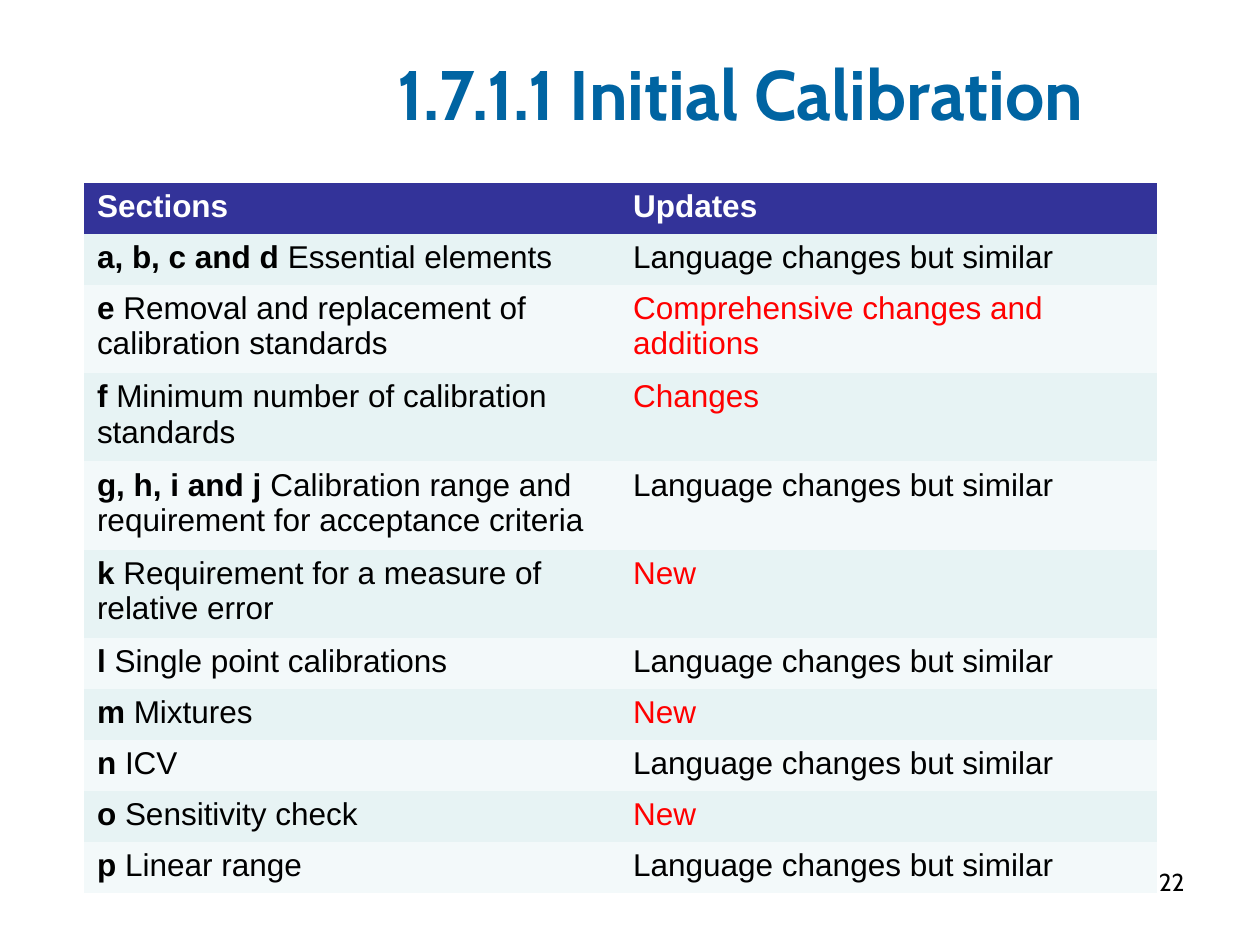
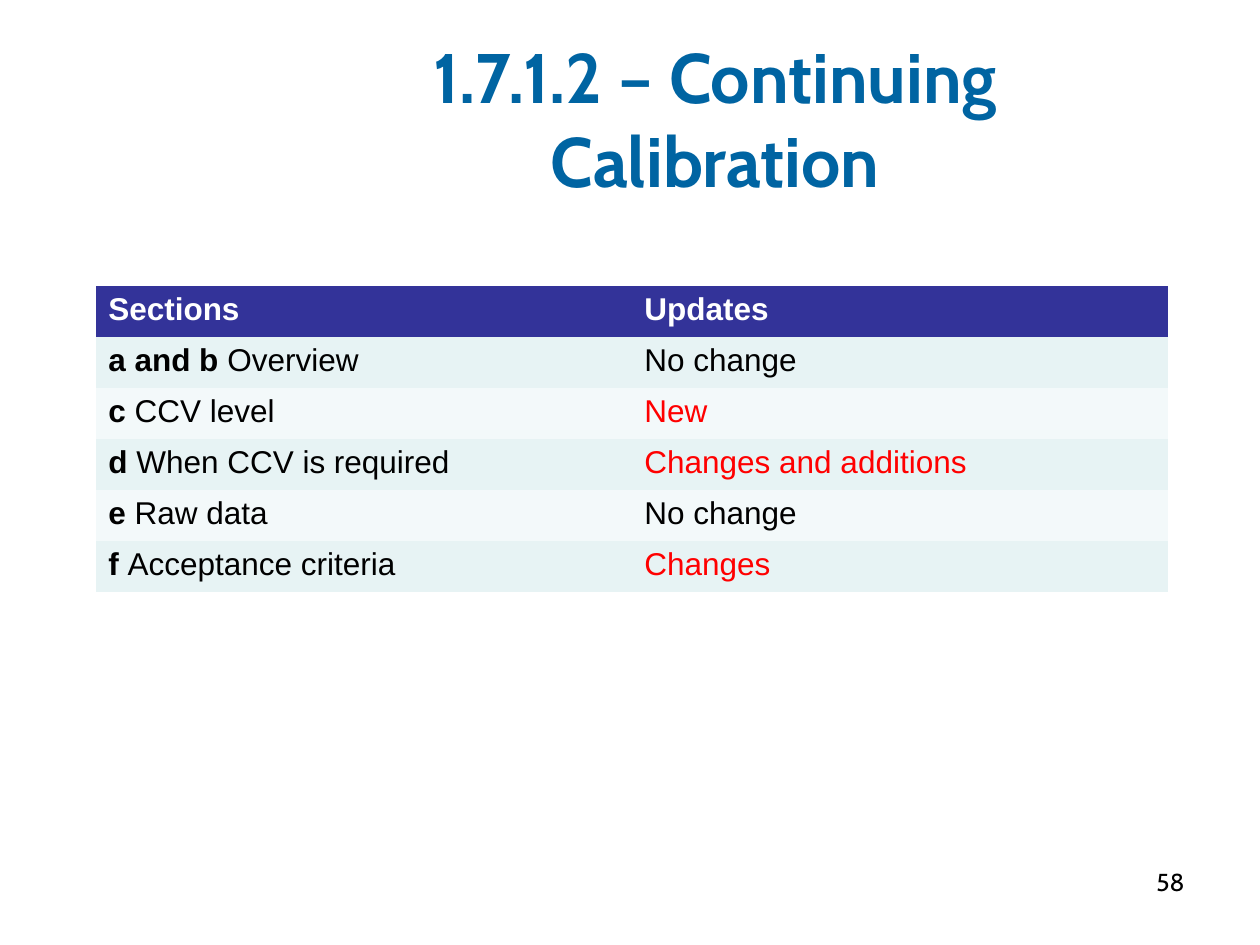
"""Build two slides that list updates to the calibration sections in tables."""
import dataclasses

import pptx
import pptx.dml.color
import pptx.enum.text
import pptx.oxml.ns
import pptx.util

Inches = pptx.util.Inches
Pt = pptx.util.Pt
RGB = pptx.dml.color.RGBColor.from_string
ALIGN = pptx.enum.text.PP_ALIGN
ANCHOR = pptx.enum.text.MSO_ANCHOR


@dataclasses.dataclass(frozen=True)
class Theme:
    title: str = "0064A2"
    header: str = "333399"
    header_text: str = "FFFFFF"
    text: str = "000000"
    changed: str = "FF0000"
    bands: tuple = ("E7F3F4", "F3F9FA")
    title_font: str = "Cabin"
    table_font: str = "Arial"
    title_size: int = 40
    table_size: int = 18
    number_size: int = 14


theme = Theme()
NO_GRID_STYLE = "{2D5ABB26-0587-4C30-8999-92F81FD0307C}"
SIMILAR = "Language changes but similar"
SAME = "No change"

slides = [
    {
        "title": "1.7.1.1 Initial Calibration",
        "title_box": (2.25, 0.3, 7.25, 0.87),
        "number": "22",
        "table_box": (0.67, 1.45, 8.51, 4.46),
        "rows": [
            ("a, b, c and d", "Essential elements", SIMILAR),
            ("e", "Removal and replacement of calibration standards",
             "Comprehensive changes and additions"),
            ("f", "Minimum number of calibration standards", "Changes"),
            ("g, h, i and j",
             "Calibration range and requirement for acceptance criteria",
             SIMILAR),
            ("k", "Requirement for a measure of relative error", "New"),
            ("l", "Single point calibrations", SIMILAR),
            ("m", "Mixtures", "New"),
            ("n", "ICV", SIMILAR),
            ("o", "Sensitivity check", "New"),
            ("p", "Linear range", SIMILAR),
        ],
    },
    {
        "title": "1.7.1.2 – Continuing Calibration",
        "title_box": (2.25, 0.31, 6.85, 1.25),
        "number": "58",
        "table_box": (0.76, 2.27, 8.51, 2.43),
        "rows": [
            ("a and b", "Overview", SAME),
            ("c", "CCV level", "New"),
            ("d", "When CCV is required", "Changes and additions"),
            ("e", "Raw data", SAME),
            ("f", "Acceptance criteria", "Changes"),
        ],
    },
]


def set_font(p, name, size, color, bold=None):
    p.font.name = name
    p.font.size = Pt(size)
    p.font.color.rgb = RGB(color)
    p.font.bold = bold


def add_text(s, box, text, size, color, align, anchor, bold=None):
    tf = s.shapes.add_textbox(*map(Inches, box)).text_frame
    tf.word_wrap = True
    tf.vertical_anchor = anchor
    p = tf.paragraphs[0]
    p.text = text
    p.alignment = align
    set_font(p, theme.title_font, size, color, bold)


prs = pptx.Presentation()
prs.slide_width = Inches(10)
prs.slide_height = Inches(7.5)

for content in slides:
    s = prs.slides.add_slide(prs.slide_layouts[6])
    add_text(s, content["title_box"], content["title"], theme.title_size,
             theme.title, ALIGN.CENTER, ANCHOR.MIDDLE, True)
    add_text(s, (7.17, 6.83, 2.33, 0.52), content["number"],
             theme.number_size, theme.text, ALIGN.RIGHT, ANCHOR.TOP)

    rows = content["rows"]
    frame = s.shapes.add_table(
        len(rows) + 1, 2, *map(Inches, content["table_box"]))
    table = frame.table
    style_tag = pptx.oxml.ns.qn("a:tableStyleId")
    next(frame.element.iter(style_tag)).text = NO_GRID_STYLE

    for cell, heading in zip(table.rows[0].cells, ("Sections", "Updates")):
        cell.fill.solid()
        cell.fill.fore_color.rgb = RGB(theme.header)
        p = cell.text_frame.paragraphs[0]
        p.text = heading
        set_font(p, theme.table_font, theme.table_size,
                 theme.header_text, True)

    for i, (letters, topic, update) in enumerate(rows):
        color = theme.text if update in (SIMILAR, SAME) else theme.changed
        section_runs = [(f"{letters} ", True), (topic, False)]
        columns = [(section_runs, theme.text), ([(update, False)], color)]
        for cell, (runs, text_color) in zip(table.rows[i + 1].cells, columns):
            cell.fill.solid()
            cell.fill.fore_color.rgb = RGB(theme.bands[i % 2])
            p = cell.text_frame.paragraphs[0]
            set_font(p, theme.table_font, theme.table_size, text_color)
            for text, bold in runs:
                r = p.add_run()
                r.text = text
                r.font.bold = bold

prs.save("out.pptx")
